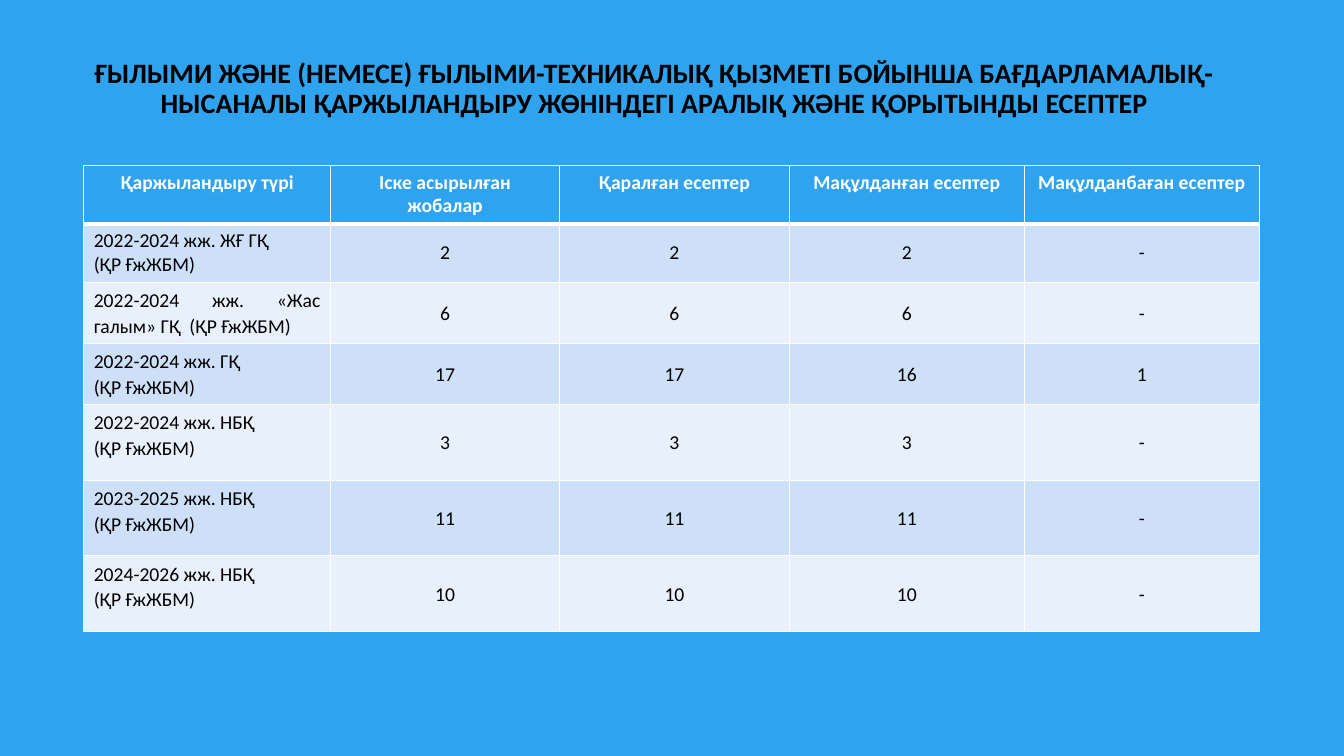
from lxml import etree
from pptx import Presentation
from pptx.dml.color import RGBColor
from pptx.enum.text import MSO_ANCHOR as Anchor, PP_ALIGN as Align
from pptx.oxml.ns import qn
from pptx.util import Inches, Pt

BLUE, WHITE, BLACK = "2FA3EE", "FFFFFF", "000000"
BANDS = ("CDE0F8", "E8F0FC")
TITLE = ("ҒЫЛЫМИ ЖӘНЕ (НЕМЕСЕ) ҒЫЛЫМИ-ТЕХНИКАЛЫҚ ҚЫЗМЕТІ БОЙЫНША БАҒДАРЛАМАЛЫҚ-"
         "НЫСАНАЛЫ ҚАРЖЫЛАНДЫРУ ЖӨНІНДЕГІ АРАЛЫҚ ЖӘНЕ ҚОРЫТЫНДЫ ЕСЕПТЕР")
HEADERS = ("Қаржыландыру түрі", "Іске асырылған жобалар", "Қаралған есептер",
           "Мақұлданған есептер", "Мақұлданбаған есептер")
MINISTRY = "(ҚР ҒжЖБМ)"
REPORTS = (
    (("2022-2024 жж. ЖҒ ГҚ", MINISTRY), "2", "2", "2", "-"),
    (("2022-2024 жж. «Жас галым» ГҚ  " + MINISTRY,), "6", "6", "6", "-"),
    (("2022-2024 жж. ГҚ", MINISTRY), "17", "17", "16", "1"),
    (("2022-2024 жж. НБҚ", MINISTRY), "3", "3", "3", "-"),
    (("2023-2025 жж. НБҚ", MINISTRY), "11", "11", "11", "-"),
    (("2024-2026 жж. НБҚ", MINISTRY), "10", "10", "10", "-"),
)
COLUMN_WIDTHS = (2.45, 2.27, 2.28, 2.33, 2.33)
ROW_HEIGHTS = (0.58, 0.58, 0.6, 0.6, 0.75, 0.75, 0.75)


def color(value):
    return RGBColor.from_string(value)


def write(frame, *lines, size=14, ink=BLACK, bold=False, align=Align.CENTER, spacing=1.0):
    for index, line in enumerate(lines):
        para = frame.paragraphs[0] if index == 0 else frame.add_paragraph()
        para.alignment, para.line_spacing = align, spacing
        para.space_before = para.space_after = Pt(0)
        span = para.add_run()
        span.text = line
        span.font.name, span.font.size = "Calibri", Pt(size)
        span.font.bold, span.font.color.rgb = bold, color(ink)


def add_borders(cell, **widths):
    """Draw white edges; keyword names are the sides L, R, T and B."""
    properties = cell._tc.get_or_add_tcPr()
    for index, side in enumerate("LRTB"):
        edge = etree.Element(qn(f"a:ln{side}"), w=str(Pt(widths.get(side, 1))))
        fill = etree.SubElement(edge, qn("a:solidFill"))
        etree.SubElement(fill, qn("a:srgbClr"), val=WHITE)
        properties.insert(index, edge)


def add_title(page, left, top, width, height):
    title = page.shapes.title
    title.left, title.top, title.width, title.height = map(Inches, (left, top, width, height))
    title.text_frame.word_wrap = True
    title.text_frame.vertical_anchor = Anchor.MIDDLE
    write(title.text_frame, TITLE, size=20, bold=True, spacing=0.9)


def fill_cell(cell, row, column, content):
    cell.fill.solid()
    if row == 0:
        cell.fill.fore_color.rgb = color(BLUE)
        write(cell.text_frame, content, ink=WHITE, bold=True)
        add_borders(cell, B=3)
        return
    cell.fill.fore_color.rgb = color(BANDS[(row - 1) % 2])
    spacing = 1.0 if row == 1 else 1.07
    if column == 0:
        align = Align.LEFT if row == 1 else Align.JUSTIFY
        write(cell.text_frame, *content, align=align, spacing=spacing)
    else:
        cell.vertical_anchor = Anchor.MIDDLE
        write(cell.text_frame, content, spacing=spacing)
    add_borders(cell, T=3 if row == 1 else 1)


def add_report_table(page, left, top):
    box = map(Inches, (left, top, sum(COLUMN_WIDTHS), sum(ROW_HEIGHTS)))
    table = page.shapes.add_table(len(ROW_HEIGHTS), len(COLUMN_WIDTHS), *box).table
    for column, width in zip(table.columns, COLUMN_WIDTHS):
        column.width = Inches(width)
    for row, height in zip(table.rows, ROW_HEIGHTS):
        row.height = Inches(height)
    for row, contents in enumerate((HEADERS, *REPORTS)):
        for column, content in enumerate(contents):
            fill_cell(table.cell(row, column), row, column, content)


def main():
    deck = Presentation()
    deck.slide_width, deck.slide_height = Inches(13.33), Inches(7.5)
    page = deck.slides.add_slide(deck.slide_layouts[5])
    page.background.fill.solid()
    page.background.fill.fore_color.rgb = color(BLUE)
    add_title(page, 0.38, 0.23, 12.22, 1.31)
    add_report_table(page, 0.83, 1.64)
    deck.save("out.pptx")


if __name__ == "__main__":
    main()
